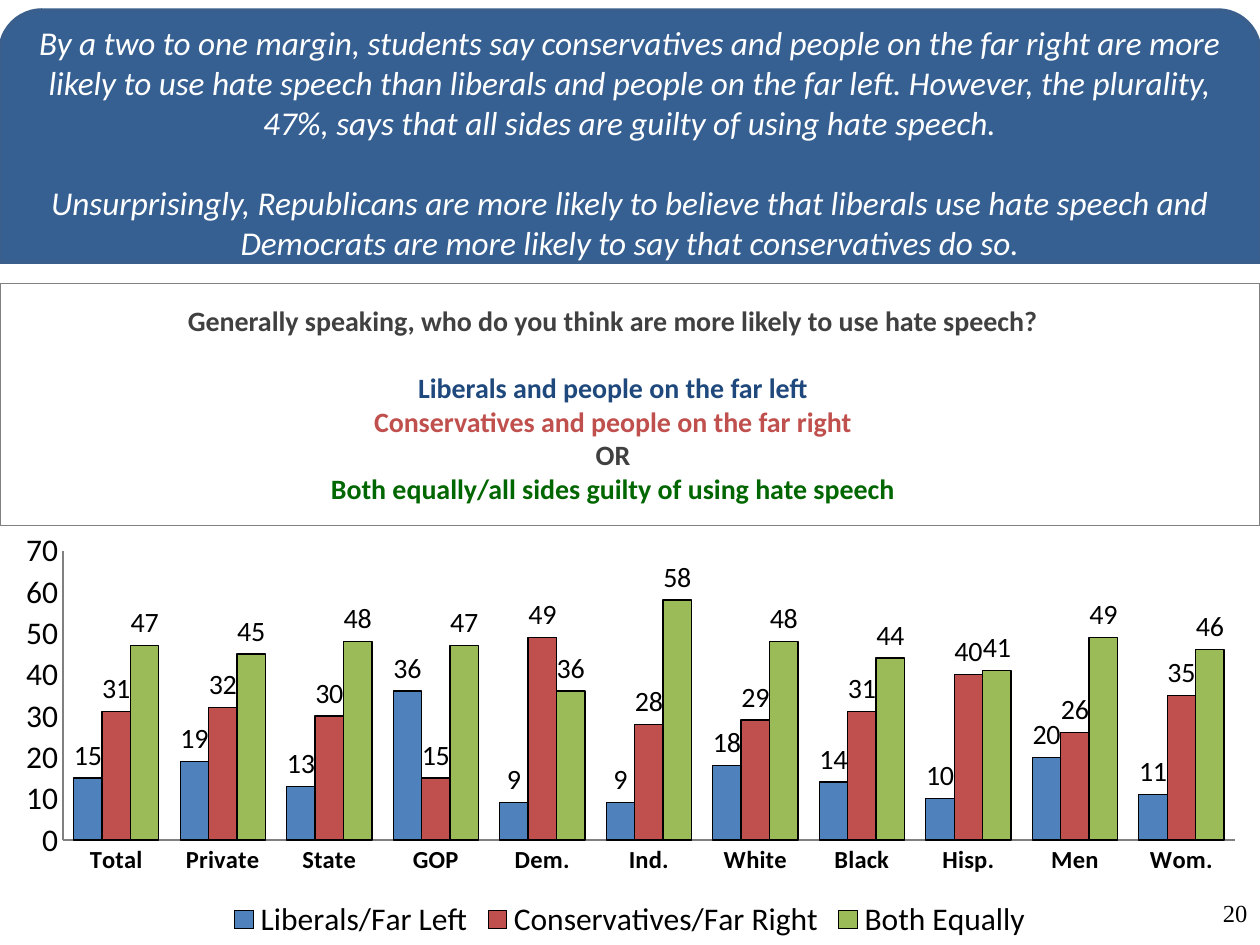
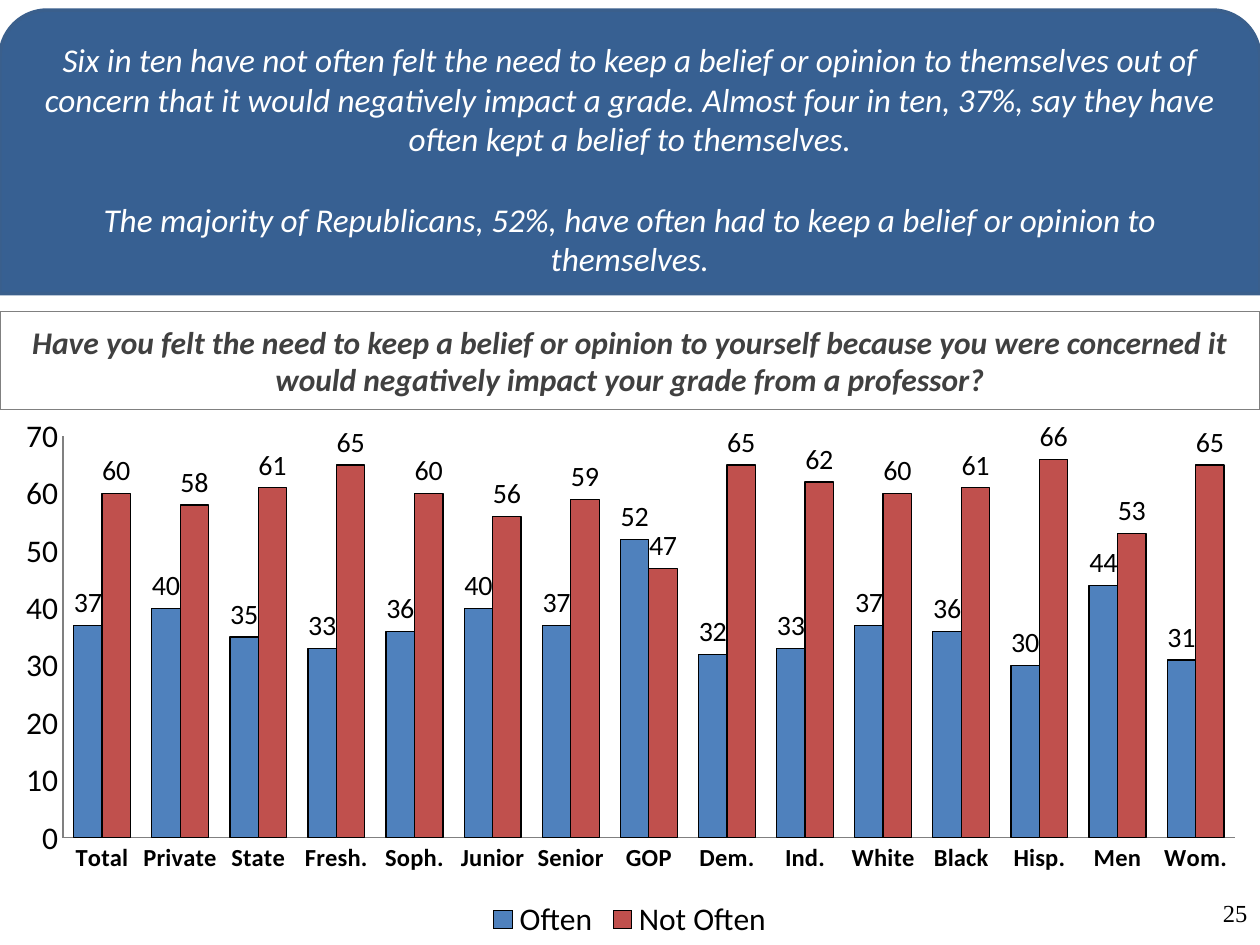
from pptx import Presentation
from pptx.chart.data import CategoryChartData as Data
from pptx.dml.color import RGBColor as Rgb
from pptx.enum.chart import XL_CHART_TYPE as Kind, XL_LABEL_POSITION as Spot
from pptx.enum.chart import XL_LEGEND_POSITION as Side, XL_TICK_MARK as Tick
from pptx.enum.shapes import MSO_SHAPE as Form
from pptx.enum.text import MSO_ANCHOR as Anchor, MSO_AUTO_SIZE as Auto, PP_ALIGN as Align
from pptx.oxml import parse_xml
from pptx.oxml.ns import nsdecls
from pptx.util import Inches, Pt

HUES = {
    "band": "376092", "edge": "3A5F8C", "rule": "808080", "text": "404040",
    "white": "FFFFFF", "black": "000000", "navy": "1F497D", "green": "006600",
    "blue": "4F81BD", "red": "C0504D", "lime": "9BBB59",
}
BARS = ("blue", "red", "lime")


class Deck:
    def __init__(self):
        self.prs = Presentation()
        self.prs.slide_width, self.prs.slide_height = Inches(10), Inches(7.5)
        self.slide = None

    def hue(self, name):
        return Rgb.from_string(HUES[name])

    def font(self, font, size, hue="black", bold=False, italic=False, name="Calibri"):
        font.name, font.size = name, Pt(size)
        font.bold, font.italic = bold, italic
        font.color.rgb = self.hue(hue)

    def line(self, line, hue, width=0.75):
        line.color.rgb, line.width = self.hue(hue), Pt(width)

    def words(self, frame, lines, size, align=Align.CENTER, **style):
        frame.word_wrap, frame.auto_size = True, Auto.NONE
        for i, (text, hue) in enumerate(lines):
            par = frame.add_paragraph() if i else frame.paragraphs[0]
            par.text, par.alignment = text, align
            self.font(par.font, size, hue, **style)

    def page(self):
        self.slide = self.prs.slides.add_slide(self.prs.slide_layouts[5])

    def title(self, top, height, lines, size, **style):
        box = self.slide.shapes.title
        box.left, box.top = Inches(0), Inches(top)
        box.width, box.height = Inches(10), Inches(height)
        self.line(box.line, "rule")
        frame = box.text_frame
        frame.vertical_anchor = Anchor.MIDDLE
        self.words(frame, lines, size, bold=True, **style)
        return frame

    def band(self, height, lines):
        box = self.slide.shapes.add_shape(
            Form.ROUND_2_SAME_RECTANGLE, Inches(0), Inches(0.08), Inches(10), Inches(height))
        box.shadow.inherit = False
        box.fill.solid()
        box.fill.fore_color.rgb = self.hue("band")
        self.line(box.line, "edge", 2)
        frame = box.text_frame
        frame.vertical_anchor = Anchor.MIDDLE
        self.words(frame, [(text, "white") for text in lines], 19, italic=True)
        frame.paragraphs[0].space_after = Pt(23)

    def axis(self, axis, size, bold=False):
        axis.has_major_gridlines = False
        axis.major_tick_mark = axis.minor_tick_mark = Tick.NONE
        self.font(axis.tick_labels.font, size, bold=bold)
        self.line(axis.format.line, "rule")

    def chart(self, top, cats, rows, plot_top, plot_high):
        data = Data()
        data.categories = cats
        for name, vals in rows.items():
            data.add_series(name, vals)
        chart = self.slide.shapes.add_chart(
            Kind.COLUMN_CLUSTERED, Inches(0), Inches(top),
            Inches(10), Inches(7.5 - top), data).chart
        self.font(chart.font, 18)
        chart.has_title = False
        chart.has_legend = True
        chart.legend.position = Side.BOTTOM
        chart.legend.include_in_layout = False
        self.font(chart.legend.font, 18)
        self.axis(chart.category_axis, 14, bold=True)
        self.axis(chart.value_axis, 18)
        chart.value_axis.minimum_scale = 0
        chart.value_axis.maximum_scale = 70
        chart.value_axis.major_unit = 10
        plot = chart.plots[0]
        plot.gap_width, plot.vary_by_categories = 75, False
        for bar, hue in zip(plot.series, BARS):
            bar.format.fill.solid()
            bar.format.fill.fore_color.rgb = self.hue(hue)
            self.line(bar.format.line, "black")
            tags = bar.data_labels
            tags.show_value, tags.position = True, Spot.OUTSIDE_END
            self.font(tags.font, 16)
        self.fit(chart, plot_top, plot_high)

    def fit(self, chart, top, high):
        area = chart.plots[0]._element.getparent()
        for old in area.findall("{*}layout"):
            area.remove(old)
        spots = {"x": 0.05, "y": top, "w": 0.93, "h": high}
        parts = "".join(f'<c:{key} val="{val}"/>' for key, val in spots.items())
        area.insert(0, parse_xml(
            f'<c:layout {nsdecls("c")}><c:manualLayout><c:layoutTarget val="inner"/>'
            f'<c:xMode val="edge"/><c:yMode val="edge"/>{parts}</c:manualLayout></c:layout>'))

    def number(self, num):
        box = self.slide.shapes.add_textbox(
            Inches(9.53), Inches(6.83), Inches(0.47), Inches(0.58))
        box.text_frame.vertical_anchor = Anchor.BOTTOM
        self.words(box.text_frame, [(str(num), "black")], 14, Align.RIGHT,
                   name="Times New Roman")


def speech(deck):
    deck.page()
    frame = deck.title(2.25, 1.92, [
        ("Generally speaking, who do you think are more likely to use hate speech?", "text"),
        ("Liberals and people on the far left", "navy"),
        ("Conservatives and people on the far right", "red"),
        ("OR", "text"),
        ("Both equally/all sides guilty of using hate speech", "green"),
    ], 16)
    ask = frame.paragraphs[0]
    ask.space_after = Pt(19)
    ask._p.get_or_add_pPr().set("marR", str(Inches(0.27)))
    deck.band(2, [
        "By a two to one margin, students say conservatives and people on the far right "
        "are more likely to use hate speech than liberals and people on the far left. "
        "However, the plurality, 47%, says that all sides are guilty of using hate speech.",
        "Unsurprisingly, Republicans are more likely to believe that liberals use hate "
        "speech and Democrats are more likely to say that conservatives do so.",
    ])
    cats = ["Total", "Private", "State", "GOP", "Dem.", "Ind.",
            "White", "Black", "Hisp.", "Men", "Wom."]
    deck.chart(4.17, cats, {
        "Liberals/Far Left": (15, 19, 13, 36, 9, 9, 18, 14, 10, 20, 11),
        "Conservatives/Far Right": (31, 32, 30, 15, 49, 28, 29, 31, 40, 26, 35),
        "Both Equally": (47, 45, 48, 47, 36, 58, 48, 44, 41, 49, 46),
    }, 0.06, 0.69)
    deck.number(20)


def belief(deck):
    deck.page()
    deck.title(2.47, 0.78, [
        ("Have you felt the need to keep a belief or opinion to yourself because you were "
         "concerned it would negatively impact your grade from a professor?", "text"),
    ], 18, italic=True)
    deck.band(2.25, [
        "Six in ten have not often felt the need to keep a belief or opinion to themselves "
        "out of concern that it would negatively impact a grade. Almost four in ten, 37%, "
        "say they have often kept a belief to themselves.",
        "The majority of Republicans, 52%, have often had to keep a belief or opinion to "
        "themselves.",
    ])
    cats = ["Total", "Private", "State", "Fresh.", "Soph.", "Junior", "Senior", "GOP",
            "Dem.", "Ind.", "White", "Black", "Hisp.", "Men", "Wom."]
    deck.chart(3.25, cats, {
        "Often": (37, 40, 35, 33, 36, 40, 37, 52, 32, 33, 37, 36, 30, 44, 31),
        "Not Often": (60, 58, 61, 65, 60, 56, 59, 47, 65, 62, 60, 61, 66, 53, 65),
    }, 0.05, 0.75)
    deck.number(25)


def main():
    deck = Deck()
    speech(deck)
    belief(deck)
    deck.prs.save("out.pptx")


if __name__ == "__main__":
    main()
